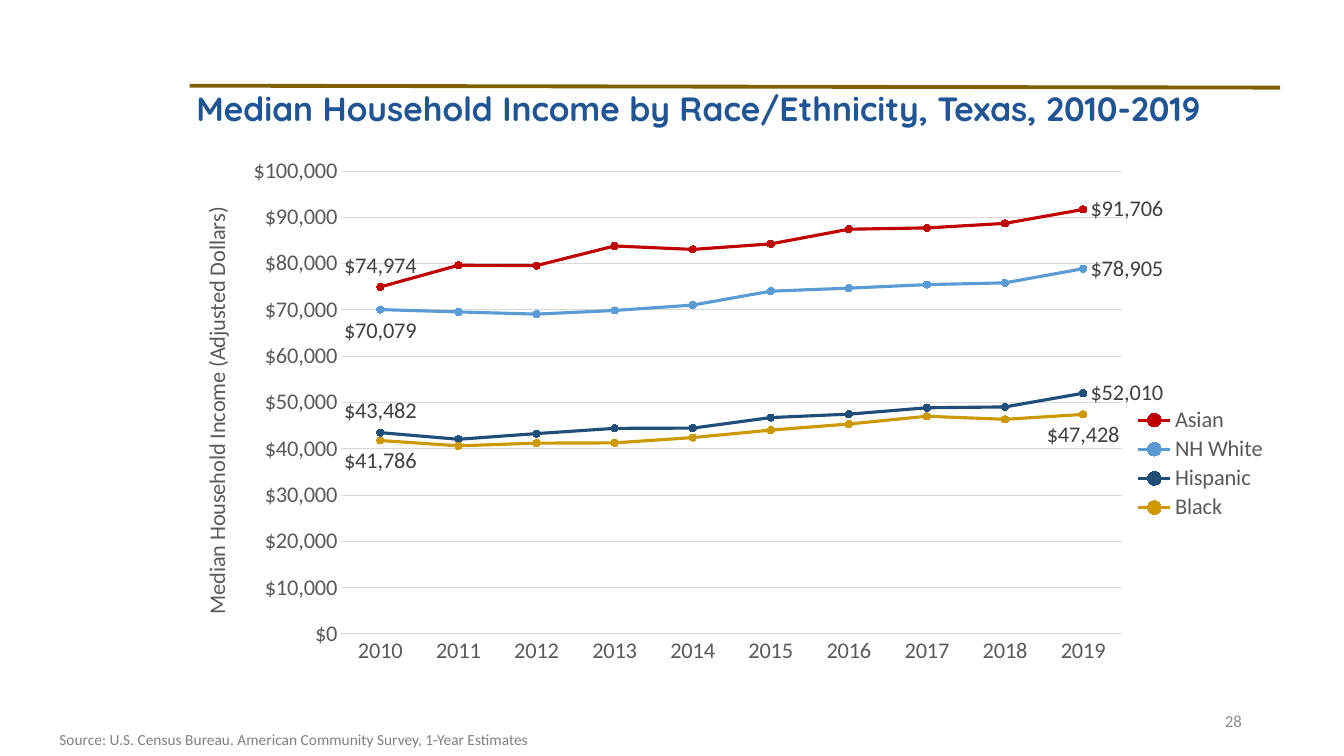
from pptx import Presentation
from pptx.chart.data import CategoryChartData
from pptx.dml.color import RGBColor
from pptx.enum.chart import (
    XL_CHART_TYPE,
    XL_LABEL_POSITION,
    XL_LEGEND_POSITION,
    XL_MARKER_STYLE,
    XL_TICK_MARK,
)
from pptx.enum.shapes import MSO_CONNECTOR
from pptx.enum.text import MSO_ANCHOR, PP_ALIGN
from pptx.oxml import parse_xml
from pptx.oxml.ns import nsdecls, qn
from pptx.util import Pt

LINE_MARKERS = XL_CHART_TYPE.LINE_MARKERS
ABOVE = XL_LABEL_POSITION.ABOVE
BELOW = XL_LABEL_POSITION.BELOW
RIGHT = XL_LABEL_POSITION.RIGHT
LEGEND_RIGHT = XL_LEGEND_POSITION.RIGHT
CIRCLE = XL_MARKER_STYLE.CIRCLE
NO_TICK = XL_TICK_MARK.NONE
STRAIGHT = MSO_CONNECTOR.STRAIGHT
TOP = MSO_ANCHOR.TOP
MIDDLE = MSO_ANCHOR.MIDDLE
ALIGN_LEFT = PP_ALIGN.LEFT
ALIGN_RIGHT = PP_ALIGN.RIGHT

DOLLARS = '"$"#,##0'
GRAY = "595959"
LIGHT_GRAY = "D9D9D9"
YEARS = [str(year) for year in range(2010, 2020)]
INCOMES = [
    ("Asian", "C00000", ABOVE, RIGHT,
     [74974, 79651, 79582, 83818, 83077, 84265, 87433, 87716, 88699, 91706]),
    ("NH White", "5B9BD5", BELOW, RIGHT,
     [70079, 69574, 69097, 69887, 71044, 74053, 74704, 75472, 75859, 78905]),
    ("Hispanic", "1F4E79", ABOVE, RIGHT,
     [43482, 42054, 43275, 44417, 44468, 46754, 47486, 48869, 49048, 52010]),
    ("Black", "CC9900", BELOW, BELOW,
     [41786, 40640, 41220, 41273, 42419, 44022, 45359, 47031, 46370, 47428]),
]


def color(value):
    return RGBColor.from_string(value)


def style_font(font, size, value, name="Calibri", bold=False):
    font.size = Pt(size)
    font.name = name
    font.bold = bold
    font.color.rgb = color(value)


def style_line(line, value, width):
    line.color.rgb = color(value)
    line.width = Pt(width)


def add_text(slide, box, text, size, value, name="Calibri", bold=False,
             align=ALIGN_LEFT, anchor=TOP, line_spacing=1.0):
    shape = slide.shapes.add_textbox(*[Pt(length) for length in box])
    frame = shape.text_frame
    frame.word_wrap = True
    frame.vertical_anchor = anchor
    paragraph = frame.paragraphs[0]
    paragraph.alignment = align
    paragraph.line_spacing = line_spacing
    run = paragraph.add_run()
    run.text = text
    style_font(run.font, size, value, name, bold)


def add_rule(slide, start, end, value, width):
    connector = slide.shapes.add_connector(
        STRAIGHT, *[Pt(length) for length in start + end])
    style_line(connector.line, value, width)
    connector.element.spPr.append(parse_xml(f"<a:effectLst {nsdecls('a')}/>"))


def set_layout(parent, index, inner=False, **places):
    for layout in parent.findall(qn("c:layout")):
        parent.remove(layout)
    target = '<c:layoutTarget val="inner"/>' if inner else ""
    modes = "".join(f'<c:{key}Mode val="edge"/>' for key in "xy")
    values = "".join(f'<c:{key} val="{place}"/>' for key, place in places.items())
    parent.insert(index, parse_xml(
        f"<c:layout {nsdecls('c')}><c:manualLayout>{target}{modes}{values}"
        "</c:manualLayout></c:layout>"))


def style_axes(chart):
    for axis in (chart.category_axis, chart.value_axis):
        axis.major_tick_mark = NO_TICK
        axis.minor_tick_mark = NO_TICK
        style_font(axis.tick_labels.font, 16, GRAY)
    style_line(chart.category_axis.format.line, LIGHT_GRAY, 0.75)

    income_axis = chart.value_axis
    income_axis.minimum_scale = 0
    income_axis.maximum_scale = 100000
    income_axis.major_unit = 10000
    income_axis.tick_labels.number_format = DOLLARS
    income_axis.tick_labels.number_format_is_linked = False
    income_axis.format.line.fill.background()
    style_line(income_axis.major_gridlines.format.line, LIGHT_GRAY, 0.75)
    run = income_axis.axis_title.text_frame.paragraphs[0].add_run()
    run.text = "Median Household Income (Adjusted Dollars)"
    style_font(run.font, 16, GRAY)


def style_series(series, value, first_position, last_position):
    series.smooth = False
    style_line(series.format.line, value, 2.25)
    series.marker.style = CIRCLE
    series.marker.size = 5
    series.marker.format.fill.solid()
    series.marker.format.fill.fore_color.rgb = color(value)
    style_line(series.marker.format.line, value, 0.75)
    series.data_labels.show_value = False
    for index, position in ((0, first_position), (len(YEARS) - 1, last_position)):
        label = series.points[index].data_label
        style_font(label.font, 16, "404040")
        label.position = position


def add_income_chart(slide, box):
    data = CategoryChartData(number_format=DOLLARS)
    data.categories = YEARS
    for name, _, _, _, values in INCOMES:
        data.add_series(name, values)
    chart = slide.shapes.add_chart(
        LINE_MARKERS, *[Pt(length) for length in box], data).chart
    chart.has_title = False
    style_font(chart.font, 16, "000000")
    chart.plots[0].vary_by_categories = False
    style_axes(chart)
    for series, (_, value, first, last, _) in zip(chart.plots[0].series, INCOMES):
        style_series(series, value, first, last)

    chart.has_legend = True
    chart.legend.position = LEGEND_RIGHT
    chart.legend.include_in_layout = False
    style_font(chart.legend.font, 16, GRAY)

    plot_area, = chart.element.xpath(".//c:plotArea")
    legend, = chart.element.xpath(".//c:legend")
    axis_title, = chart.element.xpath(".//c:valAx/c:title")
    set_layout(plot_area, 0, inner=True, x=0.142, y=0.066, w=0.716, h=0.781)
    set_layout(legend, 1, x=0.86, y=0.46, w=0.14, h=0.2)
    set_layout(axis_title, 1, x=0.01, y=0.12)


def main():
    presentation = Presentation()
    presentation.slide_width = Pt(960)
    presentation.slide_height = Pt(540)
    slide = presentation.slides.add_slide(presentation.slide_layouts[6])

    add_rule(slide, (135.4, 61.2), (914.4, 62.6), "806000", 2.75)
    add_text(slide, (678.2, 500.4, 216, 28.8), "28", 12, "8C8C8C",
             align=ALIGN_RIGHT, anchor=MIDDLE)
    add_income_chart(slide, (133.2, 94.3, 779, 423.4))
    add_text(slide, (133.2, 62.6, 779, 432),
             "Median Household Income by Race/Ethnicity, Texas, 2010-2019",
             24, "205493", name="Quicksand", bold=True, line_spacing=0.9)
    add_text(slide, (35.3, 517.7, 630, 20.9),
             "Source: U.S. Census Bureau. American Community Survey, 1-Year Estimates",
             11, "808080")

    presentation.save("out.pptx")


if __name__ == "__main__":
    main()
